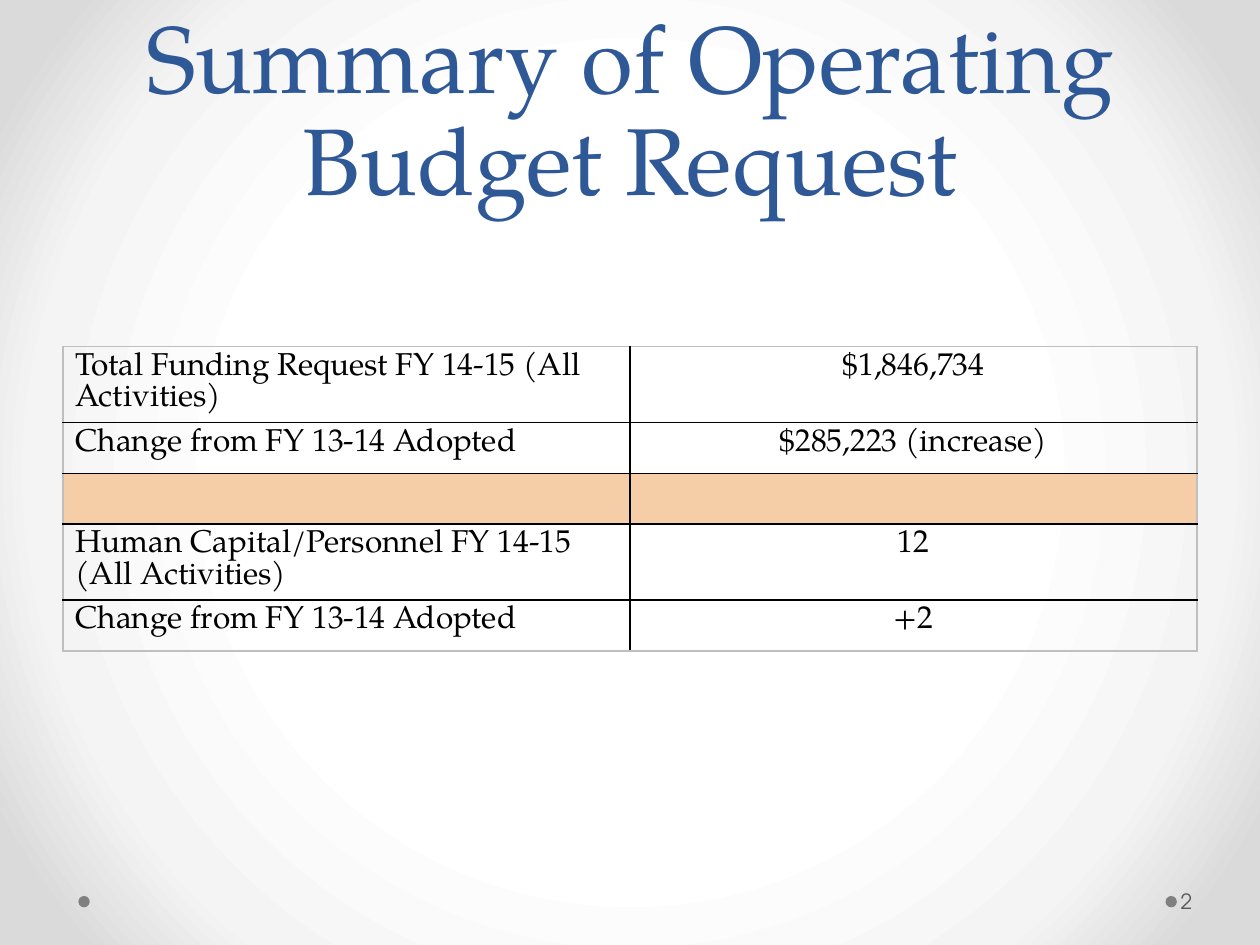
from lxml.etree import SubElement
from pptx import Presentation
from pptx.dml.color import RGBColor
from pptx.enum.shapes import MSO_SHAPE as Shape
from pptx.enum.text import MSO_ANCHOR as Anchor, PP_ALIGN as Align
from pptx.oxml.ns import qn
from pptx.util import Pt

SERIF = "TeX Gyre Pagella"
SANS = "TeX Gyre Adventor"
BLACK, EDGE_GREY, BAND = "000000", "BFBFBF", "F5CEA7"

BUDGET_ROWS = [
    ("Total Funding Request FY 14-15 (All Activities)", "$1,846,734"),
    ("Change from FY 13-14 Adopted", "$285,223 (increase)"),
    ("", ""),
    ("Human Capital/Personnel FY 14-15 (All Activities)", "12"),
    ("Change from FY 13-14 Adopted", "+2"),
]
ROW_HEIGHTS = [43.4, 29.2, 25.2, 43.4, 29.2]


def rgb(hex_color):
    return RGBColor.from_string(hex_color)


def style(paragraph, font_name, size, color, align=Align.LEFT, line_height=None):
    paragraph.alignment = align
    if line_height:
        paragraph.line_spacing = Pt(line_height)
    font = paragraph.font
    font.name, font.size = font_name, Pt(size)
    font.color.rgb = rgb(color)


def add_radial_background(slide, stops):
    fill = slide.background.fill
    fill.gradient()
    gradient = slide.background._cSld.find(".//" + qn("a:gradFill"))
    for child in list(gradient):
        gradient.remove(child)
    stop_list = SubElement(gradient, qn("a:gsLst"))
    for percent, color in stops:
        stop = SubElement(stop_list, qn("a:gs"), pos=str(percent * 1000))
        SubElement(stop, qn("a:srgbClr"), val=color)
    circle = SubElement(gradient, qn("a:path"), path="circle")
    SubElement(circle, qn("a:fillToRect"),
               {side: "50000" for side in "ltrb"})


def add_dot(slide, left, top, size=6.5):
    dot = slide.shapes.add_shape(Shape.OVAL, Pt(left), Pt(top), Pt(size), Pt(size))
    dot.shadow.inherit = False
    dot.fill.solid()
    dot.fill.fore_color.rgb = rgb("808080")
    dot.line.fill.background()


def add_text(slide, text, box, anchor, margins, **look):
    frame = slide.shapes.add_textbox(*map(Pt, box)).text_frame
    frame.word_wrap = True
    frame.vertical_anchor = anchor
    (frame.margin_left, frame.margin_top,
     frame.margin_right, frame.margin_bottom) = map(Pt, margins)
    frame.text = text
    style(frame.paragraphs[0], **look)


def set_borders(cell, colors):
    properties = cell._tc.get_or_add_tcPr()
    for index, (side, color) in enumerate(colors.items()):
        line = properties.makeelement(qn(f"a:ln{side}"), {"w": str(Pt(1))})
        SubElement(SubElement(line, qn("a:solidFill")), qn("a:srgbClr"), val=color)
        properties.insert(index, line)


def add_budget_table(slide, left, top, width):
    row_count, column_count = len(BUDGET_ROWS), len(BUDGET_ROWS[0])
    table = slide.shapes.add_table(
        row_count, column_count, Pt(left), Pt(top), Pt(width), Pt(sum(ROW_HEIGHTS))
    ).table
    table.first_row = table.horz_banding = False
    for column in table.columns:
        column.width = Pt(width / column_count)
    for r, (entries, height) in enumerate(zip(BUDGET_ROWS, ROW_HEIGHTS)):
        table.rows[r].height = Pt(height)
        for c, entry in enumerate(entries):
            cell = table.cell(r, c)
            cell.text = entry
            style(cell.text_frame.paragraphs[0], SERIF, 18, BLACK,
                  Align.CENTER if c else Align.LEFT, line_height=18)
            # Only the spacer row is coloured
            if any(entries):
                cell.fill.background()
            else:
                cell.fill.solid()
                cell.fill.fore_color.rgb = rgb(BAND)
            # Grey outside, black inside
            on_edge = {"L": c == 0, "R": c == column_count - 1,
                       "T": r == 0, "B": r == row_count - 1}
            set_borders(cell, {side: EDGE_GREY if edge else BLACK
                               for side, edge in on_edge.items()})


def main():
    deck = Presentation()
    deck.slide_width, deck.slide_height = Pt(720), Pt(540)
    slide = deck.slides.add_slide(deck.slide_layouts[6])

    # Background and footer dots
    add_radial_background(slide, [(50, "FFFFFF"), (76, "F4F4F4"), (92, "DADADA")])
    for dot_left in (666, 44.8):
        add_dot(slide, dot_left, 512)

    # Title
    add_text(slide, "Summary of Operating Budget Request", (36, 0, 648, 126),
             Anchor.BOTTOM, (7.2, 3.6, 7.2, 3.6), font_name=SERIF, size=54,
             color="2F5897", align=Align.CENTER, line_height=58)

    # Budget figures
    add_budget_table(slide, 36, 198, 648)

    # Page number
    add_text(slide, "2", (672.5, 500.4, 43.9, 28.8), Anchor.MIDDLE,
             (2.2, 3.6, 3.6, 3.6), font_name=SANS, size=12, color="595959")

    deck.save("out.pptx")


if __name__ == "__main__":
    main()
